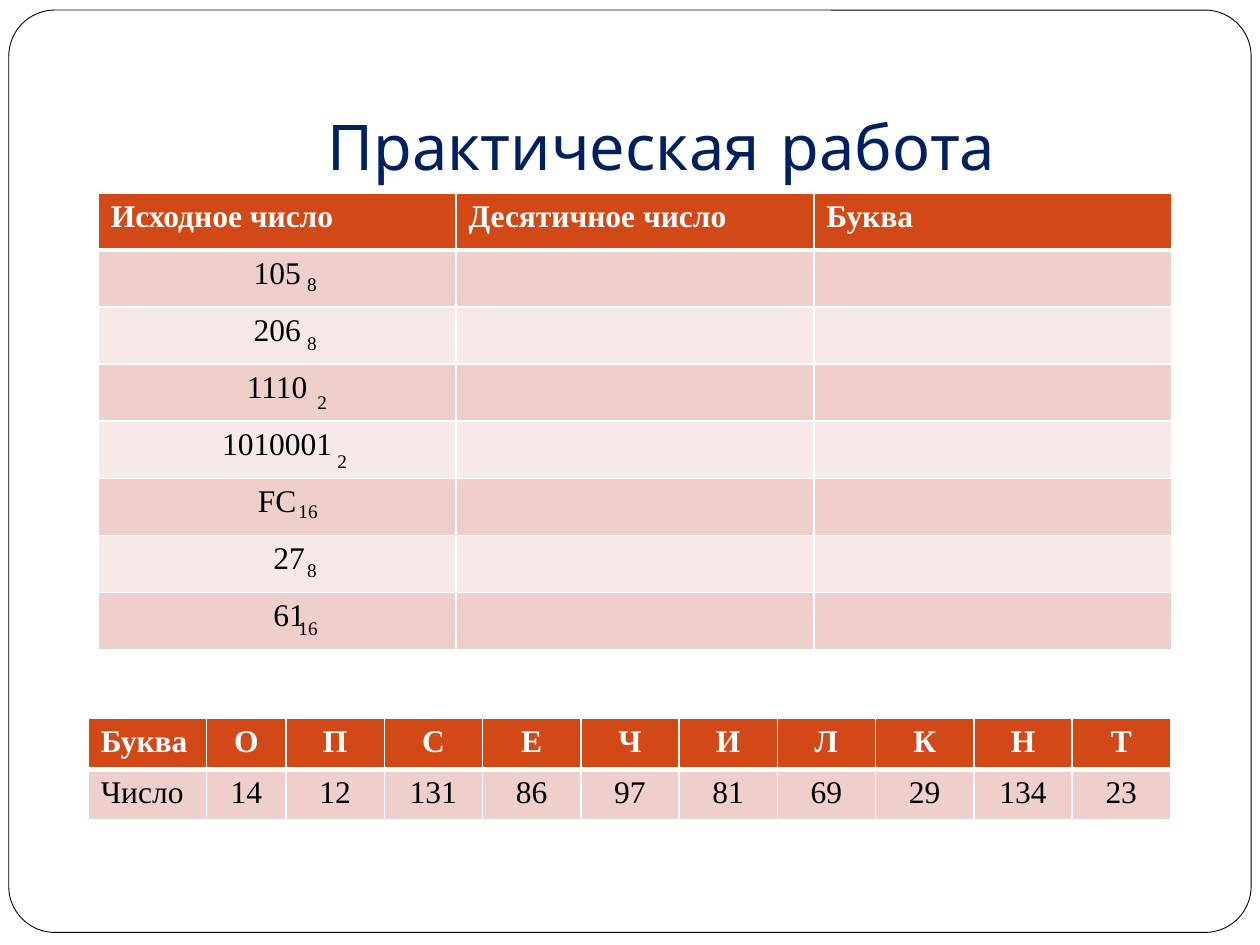
from dataclasses import dataclass

from lxml.etree import SubElement
from pptx import Presentation
from pptx.dml.color import RGBColor as Color
from pptx.enum.shapes import MSO_SHAPE as Shape
from pptx.enum.text import MSO_ANCHOR as Anchor, PP_ALIGN as Align
from pptx.oxml.ns import qn
from pptx.util import Inches, Pt


@dataclass(frozen=True)
class Theme:
    title_font: str = "Comic Neue"
    body_font: str = "Times New Roman"
    title_size: int = 36
    body_size: int = 18
    base_size: int = 11
    navy: str = "002060"
    black: str = "000000"
    white: str = "FFFFFF"
    header: str = "D34817"
    bands: tuple = ("EFCFCC", "F7E9E8")


theme = Theme()


def write(frame, text, *, size=theme.body_size, font=theme.body_font,
          color=theme.black, bold=False, align=Align.LEFT):
    para = frame.paragraphs[0]
    para.alignment = align
    span = para.add_run()
    span.text = text
    span.font.size = Pt(size)
    span.font.name = font
    span.font.bold = bold
    span.font.color.rgb = Color.from_string(color)


def paint_cell(cell, row):
    """Draw white borders, heavier under the header, and fill by row."""
    properties = cell._tc.get_or_add_tcPr()
    heavy_side = {0: "lnB", 1: "lnT"}.get(row)
    for side in ("lnL", "lnR", "lnT", "lnB"):
        width = 3 if side == heavy_side else 1
        line = SubElement(properties, qn(f"a:{side}"), w=str(Pt(width)))
        fill = SubElement(line, qn("a:solidFill"))
        SubElement(fill, qn("a:srgbClr"), val=theme.white)
    cell.fill.solid()
    color = theme.bands[(row - 1) % 2] if row else theme.header
    cell.fill.fore_color.rgb = Color.from_string(color)


deck = Presentation()
deck.slide_width, deck.slide_height = Inches(10), Inches(7.5)
page = deck.slides.add_slide(deck.slide_layouts[6])
UNIT = deck.slide_width // 1000  # the page is a grid of 1000 by 750 units

# Page frame
border = page.shapes.add_shape(
    Shape.ROUNDED_RECTANGLE, 7 * UNIT, 8 * UNIT, 986 * UNIT, 732 * UNIT)
border.adjustments[0] = 0.05
border.shadow.inherit = False
border.fill.solid()
border.fill.fore_color.rgb = Color.from_string(theme.white)
border.line.color.rgb = Color.from_string(theme.black)
border.line.width = Pt(0.5)

# Title
title = page.shapes.add_textbox(100 * UNIT, 30 * UNIT, 850 * UNIT, 125 * UNIT)
title.text_frame.word_wrap = True
title.text_frame.vertical_anchor = Anchor.BOTTOM
title.text_frame.margin_bottom = 10 * UNIT
write(title.text_frame, "Практическая работа", size=theme.title_size,
      font=theme.title_font, color=theme.navy, align=Align.CENTER)

# Both tables: left, top, column widths, row height, rows of text
numbers = ["105", "206", "1110", "1010001", "FC", "27", "61"]
exercise = [["Исходное число", "Десятичное число", "Буква"]]
exercise += [[number, "", ""] for number in numbers]
key = [
    ["Буква", "О", "П", "С", "Е", "Ч", "И", "Л", "К", "Н", "Т"],
    ["Число", "14", "12", "131", "86", "97", "81", "69", "29", "134", "23"],
]
tables = [
    (78, 153, [284] * 3, 45.35, exercise),
    (70, 570, [94, 63] + [78] * 9, 40.5, key),
]
for left, top, widths, row_height, rows in tables:
    table = page.shapes.add_table(
        len(rows), len(widths), left * UNIT, top * UNIT, sum(widths) * UNIT,
        int(row_height * len(rows) * UNIT)).table
    for column, width in zip(table.columns, widths):
        column.width = width * UNIT
    for r, texts in enumerate(rows):
        table.rows[r].height = int(row_height * UNIT)
        for c, text in enumerate(texts):
            cell = table.cell(r, c)
            paint_cell(cell, r)
            if not text:
                continue
            centered = c > 0 if rows is key else r > 0
            if text in ("27", "61"):
                cell.margin_left = 29 * UNIT
            write(cell.text_frame, text, bold=r == 0,
                  color=theme.black if r else theme.white,
                  align=Align.CENTER if centered else Align.LEFT)

# Number bases, set as small labels beside the numbers
bases = [("8", 234, 211), ("8", 234, 258), ("2", 242, 305), ("2", 258, 352),
         ("16", 227, 391), ("8", 234, 438), ("16", 227, 484)]
for base, left, top in bases:
    width = 23 if len(base) == 1 else 39
    label = page.shapes.add_textbox(
        left * UNIT, top * UNIT, width * UNIT, 29 * UNIT)
    label.text_frame.word_wrap = True
    write(label.text_frame, base, size=theme.base_size)

deck.save("out.pptx")
